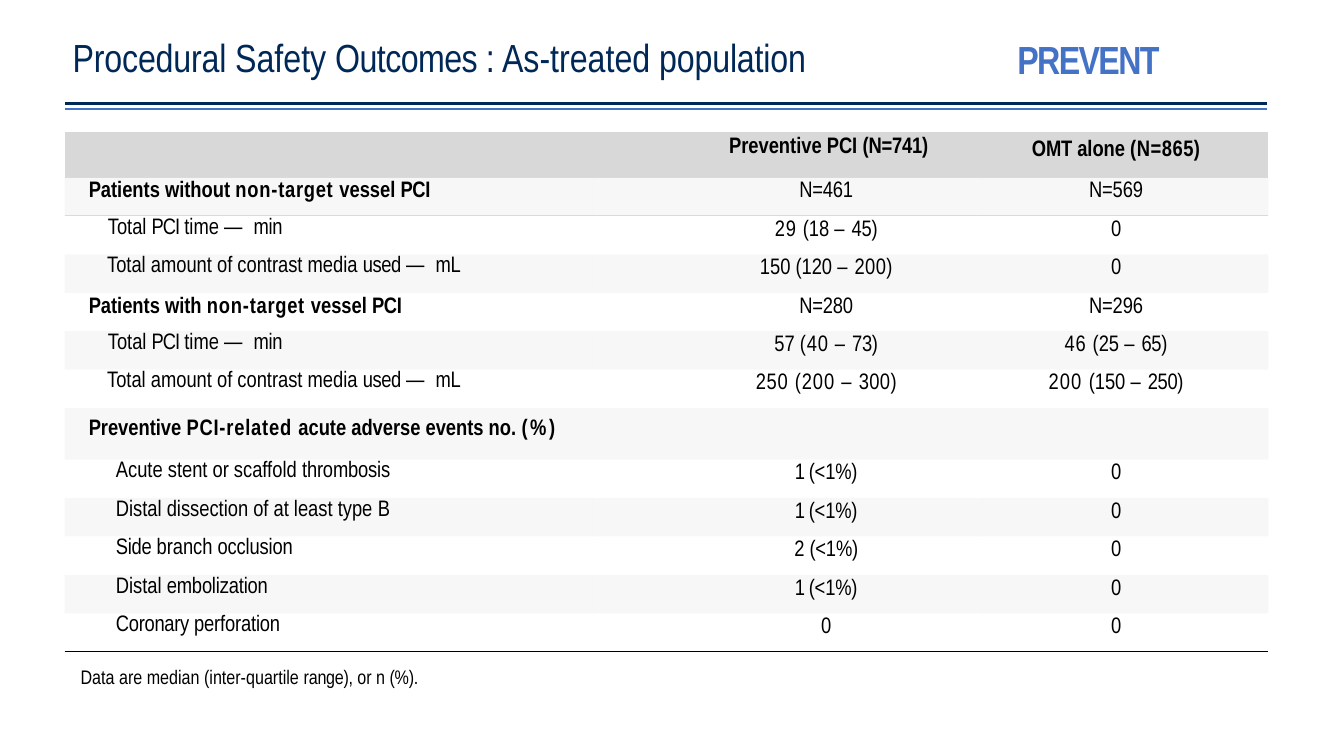
from dataclasses import dataclass

from lxml import etree
from pptx import Presentation, util as u
from pptx.dml.color import RGBColor
from pptx.enum import shapes, text
from pptx.oxml.ns import qn

Runs = tuple[tuple[str, float], ...]

HUES = {"navy": "002856", "blue": "4472C4", "black": "000000",
        "head": "D8D8D8", "band": "DADADA"}
FONT = "Arial Narrow"
PLAIN_STYLE = "{2D5ABB26-0587-4C30-8999-92F81FD0307C}"
LEFT, RIGHT = 0.64, 12.57
COLS = (5.24, 3.86, 2.84)
HEAD_H, GROUP_H, TABLE_H = 0.45, 0.51, 5.16
ALIGN = {"l": text.PP_ALIGN.LEFT, "c": text.PP_ALIGN.CENTER, "r": text.PP_ALIGN.RIGHT}


@dataclass(frozen=True)
class Label:
    runs: Runs
    left: float = 0.51
    right: float = 0
    top: float = 0.02
    align: str = "l"
    bold: bool = False


@dataclass(frozen=True)
class Row:
    label: Label
    first: Runs = ()
    last: Runs = ()


@dataclass(frozen=True)
class Box:
    runs: Runs
    at: tuple[float, float, float, float]
    top: float
    left: float
    size: float
    hue: str
    bold: bool = False


@dataclass(frozen=True)
class Rule:
    top: float
    hue: str
    width: float


def group(*runs: tuple[str, float], top: float = 0.04) -> Label:
    return Label(runs, left=0.24, top=top, bold=True)


TARGET = (("non-", 0.6), ("target ", 0.5), ("vessel ", 0), ("PCI", -0.2))
TIME = Label((("Total ", 0), ("PCI ", -0.7), ("time ", 0), ("— ", 2.2), ("min", -0.2)),
             left=0.43)
MEDIA = Label((("Total amount of contrast media ", 0), ("used ", -0.3), ("— ", 2.2),
               ("mL", -0.2)), left=0, right=1.31, align="r")
ZERO = (("0", 0.5),)
ONE = (("1 ", -1), ("(<1%)", -0.1))
TWO = (("2 ", 0), ("(<1%)", -0.1))

ROWS = (
    Row(group(("Patients without ", 0), *TARGET), (("N=461", -0.1),), (("N=569", -0.1),)),
    Row(TIME, (("29 ", 0.6), ("(18 ", 0), ("– ", 0.7), ("45)", -0.2)), ZERO),
    Row(MEDIA, (("150 (120 ", 0), ("– ", 0.7), ("200)", 0.3)), ZERO),
    Row(group(("Patients with ", 0), *TARGET), (("N=280", -0.1),), (("N=296", -0.1),)),
    Row(TIME, (("57 ", 0), ("(40 ", 0.6), ("– ", 0.7), ("73)", -0.2)),
        (("46 ", 0.6), ("(25 ", 0), ("– ", 0.7), ("65)", -0.2))),
    Row(MEDIA, (("250 ", 0.6), ("(200 – ", 0.7), ("300)", 0.3)),
        (("200 ", 0.8), ("(150 ", 0), ("– ", 0.7), ("250)", -0.2))),
    Row(group(("Preventive ", 0), ("PCI-related ", 0.6), ("acute adverse events no. ", 0),
              ("(%)", 1.9), top=0.11)),
    Row(Label((("Acute stent or scaffold ", 0), ("thrombosis", -0.1))), ONE, ZERO),
    Row(Label((("Distal dissection of at least type ", 0), ("B", -0.5))), ONE, ZERO),
    Row(Label((("Side ", -0.2), ("branch ", 0), ("occlusion", -0.1))), TWO, ZERO),
    Row(Label((("Distal ", 0), ("embolization", -0.1))), ONE, ZERO),
    Row(Label((("Coronary ", -0.2), ("perforation", -0.1))), ZERO, ZERO),
)

HEADS = (
    Label((("Preventive PCI ", 0), ("(N=741)", -0.1)), 0.82, 0, 0.05, "c", True),
    Label((("OMT ", -0.1), ("alone ", 0), ("(N=865)", 0.4)), 0, 0.18, 0.08, "c", True),
)

BOXES = (
    Box((("Procedural ", -0.1), ("Safety ", 0), ("Outcomes ", -0.4), (": As-treated ", 0),
         ("population", -0.1)), (LEFT, 0.21, 8.72, 0.63), 0.12, 0.08, 28, "navy"),
    Box((("PREVENT", -1.1),), (10.08, 0.34, 1.43, 0.49), 0.01, 0.01, 28, "blue", True),
    Box((("Data are median (inter-quartile ", 0), ("range), ", -0.2), ("or n ", 0),
         ("(%).", -0.2)), (0.79, 6.59, 3.44, 0.26), 0.01, 0.01, 14, "black"),
)

RULES = (Rule(1.03, "navy", 2.25), Rule(1.08, "blue", 1))


def color(hue: str) -> RGBColor:
    return RGBColor.from_string(HUES[hue])


def write(frame, runs: Runs, *, size: float = 16, hue: str = "black", bold: bool = False,
          align: str = "l", left: float = 0, right: float = 0) -> None:
    para = frame.paragraphs[0]
    para.alignment = ALIGN[align]
    props = para._p.get_or_add_pPr()
    props.set("marL", str(u.Inches(left)))
    props.set("marR", str(u.Inches(right)))
    props.set("indent", "0")
    for words, gap in runs:
        run = para.add_run()
        run.text = words
        run.font.name, run.font.size, run.font.bold = FONT, u.Pt(size), bold
        run.font.color.rgb = color(hue)
        run._r.get_or_add_rPr().set("spc", str(round(gap * 100)))


def pad(item, top: float) -> None:
    item.margin_left = item.margin_right = item.margin_bottom = 0
    item.margin_top = u.Inches(top)


def paint(cell, hue: str, alpha: int = 100) -> None:
    cell.fill.solid()
    cell.fill.fore_color.rgb = color(hue)
    if alpha < 100:
        tone = cell._tc.tcPr.find(".//" + qn("a:srgbClr"))
        etree.SubElement(tone, qn("a:alpha"), val=str(alpha * 1000))


def edge(cell, side: str, hue: str) -> None:
    line = etree.Element(qn(f"a:ln{side}"), w=str(u.Pt(1)))
    fill = etree.SubElement(line, qn("a:solidFill"))
    etree.SubElement(fill, qn("a:srgbClr"), val=HUES[hue])
    cell._tc.get_or_add_tcPr().insert(0, line)


def fill_cell(cell, label: Label) -> None:
    pad(cell, label.top)
    write(cell.text_frame, label.runs, bold=label.bold, align=label.align,
          left=label.left, right=label.right)


def add_grid(slide) -> None:
    count = len(ROWS) + 1
    grid = slide.shapes.add_table(count, len(COLS), u.Inches(LEFT), u.Inches(1.31),
                                  u.Inches(sum(COLS)), u.Inches(TABLE_H)).table
    grid._tbl.tblPr.find(qn("a:tableStyleId")).text = PLAIN_STYLE
    grid.first_row = grid.horz_banding = False
    for col, width in zip(grid.columns, COLS):
        col.width = u.Inches(width)
    step = (TABLE_H - HEAD_H - GROUP_H) / (len(ROWS) - 1)
    grid.rows[0].height = u.Inches(HEAD_H)
    for cell in grid.rows[0].cells:
        paint(cell, "head")
        edge(cell, "B", "band")
    for col, label in enumerate(HEADS, 1):
        fill_cell(grid.cell(0, col), label)
    for num, row in enumerate(ROWS, 1):
        grid.rows[num].height = u.Inches(step if row.first else GROUP_H)
        for cell in grid.rows[num].cells:
            if num % 2:
                paint(cell, "band", 20)
            else:
                cell.fill.background()
            if num in (1, count - 1):
                edge(cell, "B", "band" if num == 1 else "black")
            if num == 1:
                edge(cell, "T", "band")
        fill_cell(grid.cell(num, 0), row.label)
        if row.first:
            fill_cell(grid.cell(num, 1), Label(row.first, 0.77, 0, 0.04, "c"))
            fill_cell(grid.cell(num, 2), Label(row.last, 0, 0.18, 0.04, "c"))
        else:
            grid.cell(num, 0).merge(grid.cell(num, len(COLS) - 1))


def add_box(slide, box: Box) -> None:
    frame = slide.shapes.add_textbox(*map(u.Inches, box.at)).text_frame
    frame.word_wrap = True
    frame.auto_size = text.MSO_AUTO_SIZE.SHAPE_TO_FIT_TEXT
    pad(frame, box.top)
    write(frame, box.runs, size=box.size, hue=box.hue, bold=box.bold, left=box.left)


def add_rule(slide, rule: Rule) -> None:
    line = slide.shapes.add_connector(shapes.MSO_CONNECTOR.STRAIGHT, u.Inches(LEFT),
                                      u.Inches(rule.top), u.Inches(RIGHT), u.Inches(rule.top))
    line.line.color.rgb = color(rule.hue)
    line.line.width = u.Pt(rule.width)
    etree.SubElement(line._element.spPr, qn("a:effectLst"))


def main() -> None:
    deck = Presentation()
    deck.slide_width, deck.slide_height = u.Inches(13.33), u.Inches(7.5)
    slide = deck.slides.add_slide(deck.slide_layouts[6])
    add_grid(slide)
    for box in BOXES:
        add_box(slide, box)
    for rule in RULES:
        add_rule(slide, rule)
    deck.save("out.pptx")


if __name__ == "__main__":
    main()
